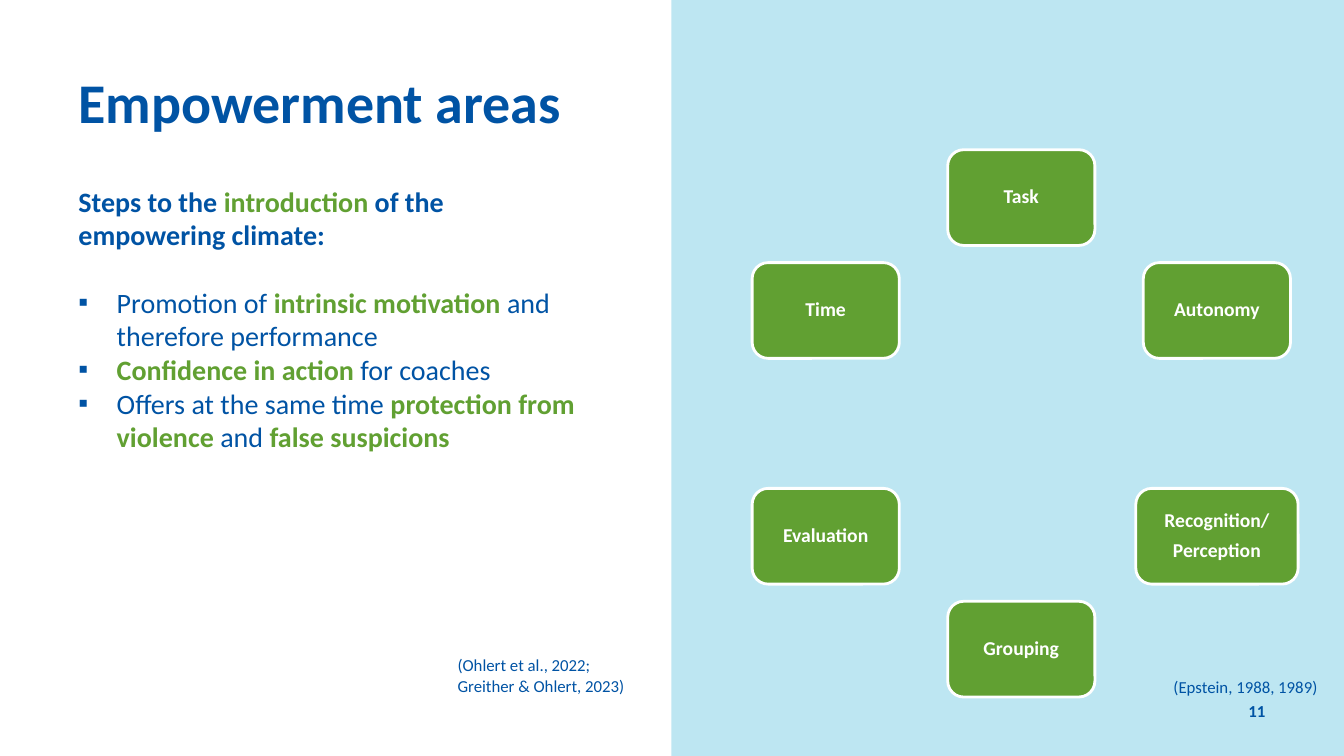
from math import cos, pi, sin

from lxml import etree
from pptx import Presentation
from pptx.dml.color import RGBColor
from pptx.enum.shapes import MSO_SHAPE
from pptx.enum.text import MSO_ANCHOR, PP_ALIGN
from pptx.oxml.ns import qn
from pptx.util import Inches, Pt

COLORS = {"blue": "0053A4", "green": "61A032", "sky": "BDE6F2", "white": "FFFFFF"}


def color(name):
    return RGBColor.from_string(COLORS[name])


def add_text(left, top, width, height, lines, size, bold=False,
             anchor=MSO_ANCHOR.TOP, align=PP_ALIGN.LEFT):
    box = page.shapes.add_textbox(Inches(left), Inches(top), Inches(width), Inches(height))
    frame = box.text_frame
    frame.word_wrap = True
    frame.vertical_anchor = anchor
    frame.text = "\n".join(lines)
    for para in frame.paragraphs:
        para.alignment = align
        para.font.name = "Calibri"
        para.font.size = Pt(size)
        para.font.bold = bold
        para.font.color.rgb = color("blue")


deck = Presentation()
deck.slide_width = Inches(13.33)
deck.slide_height = Inches(7.5)
page = deck.slides.add_slide(deck.slide_layouts[6])

# Right-hand panel
panel = page.shapes.add_shape(MSO_SHAPE.RECTANGLE, Inches(6.66), 0, Inches(6.67), Inches(7.5))
panel.shadow.inherit = False
panel.fill.solid()
panel.fill.fore_color.rgb = color("sky")
panel.line.fill.background()

# Title
add_text(0.68, 0.45, 10.76, 1.1, ["Empowerment areas"], 40, True, MSO_ANCHOR.MIDDLE)

# Body: each span is (text, color, bold); the first paragraph is the heading
body = [
    [("Steps to the ", "blue", True), ("introduction", "green", True),
     (" of the empowering climate:", "blue", True)],
    [("Promotion of ", "blue", False), ("intrinsic motivation ", "green", True),
     ("and therefore performance", "blue", False)],
    [("Confidence in action", "green", True), (" for coaches", "blue", False)],
    [("Offers at the same time ", "blue", False), ("protection from violence ", "green", True),
     ("and ", "blue", False), ("false suspicions", "green", True)],
]
body_box = page.shapes.add_textbox(Inches(0.68), Inches(1.78), Inches(5.34), Inches(4.87))
body_frame = body_box.text_frame
body_frame.word_wrap = True
for index, spans in enumerate(body):
    para = body_frame.paragraphs[0] if index == 0 else body_frame.add_paragraph()
    if index > 0:
        properties = para._p.get_or_add_pPr()
        properties.set("marL", str(Inches(0.38)))
        properties.set("indent", str(-Inches(0.38)))
        bullet_color = etree.SubElement(properties, qn("a:buClr"))
        etree.SubElement(bullet_color, qn("a:srgbClr"), val=COLORS["blue"])
        etree.SubElement(properties, qn("a:buFont"), typeface="Arial")
        etree.SubElement(properties, qn("a:buChar"), char="▪")
    if index == 1:
        para.space_before = Pt(24)
    para.font.name = "Calibri"
    para.font.size = Pt(20)
    for text, shade, bold in spans:
        span = para.add_run()
        span.text = text
        span.font.bold = bold
        span.font.color.rgb = color(shade)

# Ring of areas, clockwise from the top
areas = ["Task", "Autonomy", "Recognition/\nPerception", "Grouping", "Evaluation", "Time"]
center_x, center_y, radius, height = 10.13, 4.2, 2.24, 0.95
for index, label in enumerate(areas):
    angle = 2 * pi * index / len(areas)
    width = 1.61 if "\n" in label else 1.46
    left = center_x + radius * sin(angle) - width / 2
    top = center_y - radius * cos(angle) - height / 2
    area = page.shapes.add_shape(MSO_SHAPE.ROUNDED_RECTANGLE, Inches(left), Inches(top),
                                 Inches(width), Inches(height))
    area.shadow.inherit = False
    area.fill.solid()
    area.fill.fore_color.rgb = color("green")
    area.line.color.rgb = color("white")
    area.line.width = Pt(2)
    frame = area.text_frame
    frame.margin_left = frame.margin_right = Inches(0.06)
    frame.margin_top = frame.margin_bottom = Inches(0.06)
    frame.vertical_anchor = MSO_ANCHOR.MIDDLE
    frame.text = label
    for para in frame.paragraphs:
        para.alignment = PP_ALIGN.CENTER
        para.line_spacing = 0.9
        para.space_after = Pt(5.9)
        para.font.name = "Calibri"
        para.font.size = Pt(14)
        para.font.bold = True
        para.font.color.rgb = color("white")

# Sources and page number
add_text(4.44, 6.45, 2.57, 0.5, ["(Ohlert et al., 2022;", "Greither & Ohlert, 2023)"], 12)
add_text(11.54, 6.66, 1.79, 0.3, ["(Epstein, 1988, 1989)"], 12)
add_text(11.92, 6.9, 0.73, 0.31, ["11"], 12, True, MSO_ANCHOR.MIDDLE, PP_ALIGN.RIGHT)

deck.save("out.pptx")
